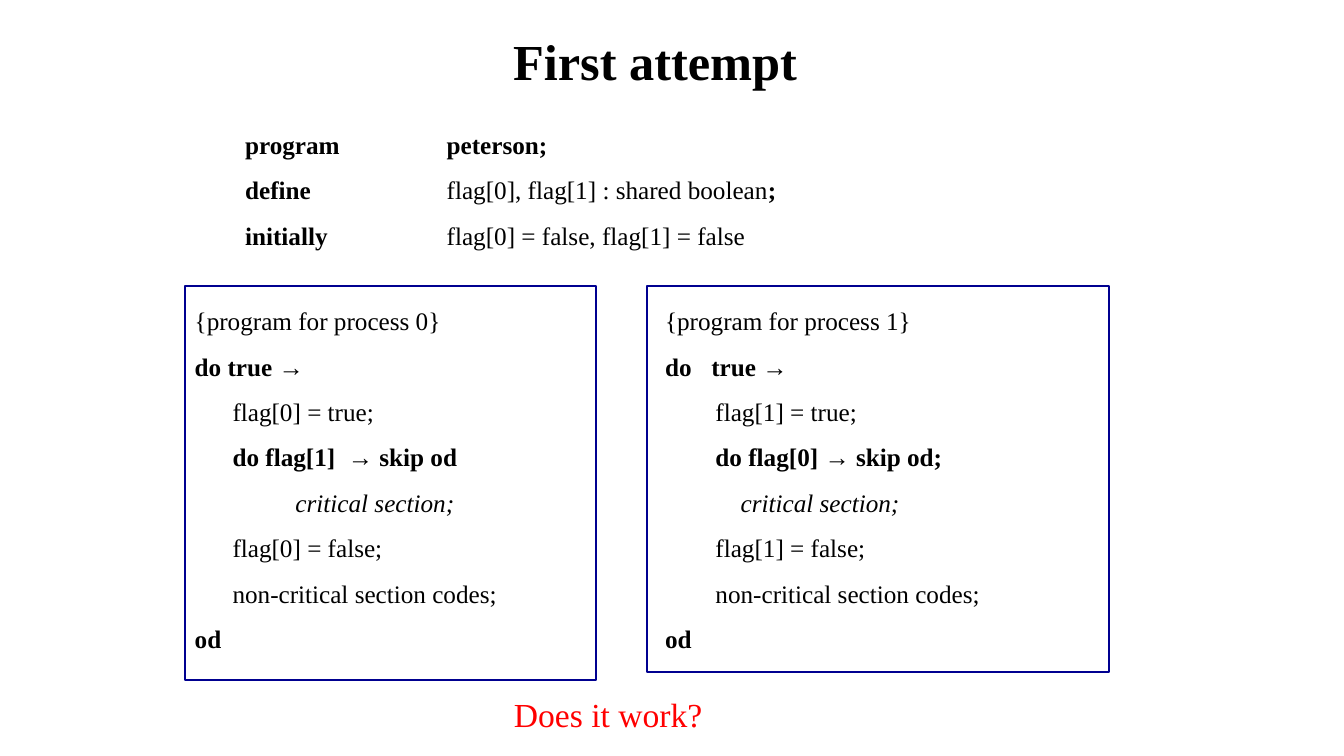
from pptx import Presentation
from pptx.dml.color import RGBColor
from pptx.enum.shapes import MSO_SHAPE
from pptx.enum.text import MSO_AUTO_SIZE, PP_ALIGN
from pptx.oxml.ns import qn
from pptx.util import Pt
from lxml.etree import SubElement

FONT = "Times New Roman"
BLACK, NAVY, RED = "000000", "000090", "FF0000"


def color(value):
    return RGBColor.from_string(value)


def add_text(box, lines, size=18, text_color=BLACK, wrap=True, spacing=1.5):
    """Add a text box; each line is (indent, tab stop, [(text, style), ...]), style using b and i."""
    text_frame = slide.shapes.add_textbox(*map(Pt, box)).text_frame
    text_frame.word_wrap = wrap
    text_frame.auto_size = MSO_AUTO_SIZE.SHAPE_TO_FIT_TEXT
    for number, (indent, tab_stop, pieces) in enumerate(lines):
        paragraph = text_frame.add_paragraph() if number else text_frame.paragraphs[0]
        paragraph.line_spacing = spacing
        properties = paragraph._p.get_or_add_pPr()
        if indent:
            properties.set("marL", str(Pt(indent)))
            properties.set("indent", "0")
        if tab_stop:
            tabs = SubElement(properties, qn("a:tabLst"))
            SubElement(tabs, qn("a:tab"), pos=str(Pt(tab_stop)), algn="l")
        for text, style in pieces:
            run = paragraph.add_run()
            run.text = text
            run.font.name = FONT
            run.font.size = Pt(size)
            run.font.bold = "b" in style
            run.font.italic = "i" in style
            run.font.color.rgb = color(text_color)
    return text_frame


presentation = Presentation()
presentation.slide_width, presentation.slide_height = Pt(960), Pt(540)
slide = presentation.slides.add_slide(presentation.slide_layouts[6])

# Programs of the two processes
processes = [
    # text box, frame, body indent, critical indent, loop start, loop tab, waiting line
    ((132, 204, 330, 291), (132, 204, 294, 282), 27, 72,
     "do true →", 0, "do flag[1]  → skip od"),
    ((468, 204, 321, 291), (462, 204, 330, 276), 36, 54,
     "do\ttrue →", 33, "do flag[0] → skip od;"),
]
for process, (box, frame, body, critical, loop, loop_tab, waiting) in enumerate(processes):
    add_text(box, [
        (0, 0, [(f"{{program for process {process}}}", "")]),
        (0, loop_tab, [(loop, "b")]),
        (body, 0, [(f"flag[{process}] = true;", "")]),
        (body, 0, [(waiting, "b")]),
        (critical, 0, [("critical section;", "i")]),
        (body, 0, [(f"flag[{process}] = false;", "")]),
        (body, 0, [("non-critical section codes;", "")]),
        (0, 0, [("od", "b")]),
    ])
    shape = slide.shapes.add_shape(MSO_SHAPE.RECTANGLE, *map(Pt, frame))
    shape.shadow.inherit = False
    shape.fill.background()
    shape.line.color.rgb = color(NAVY)
    shape.line.width = Pt(1.5)

# Declarations
add_text((168, 78, 606, 136), [
    (0, 144, [("program\tpeterson;", "b")]),
    (0, 144, [("define\t", "b"), ("flag[0], flag[1] : shared boolean", ""), (";", "b")]),
    (0, 144, [("initially\t", "b"), ("flag[0] = false, flag[1] = false", "")]),
])

# Title and closing question
title = add_text((358, 18, 220, 51), [(0, 0, [("First attempt", "b")])],
                 size=36, wrap=False, spacing=None)
title.paragraphs[0].alignment = PP_ALIGN.CENTER
add_text((360, 492, 150, 37), [(0, 0, [("Does it work?", "")])],
         size=24, text_color=RED, wrap=False, spacing=None)

presentation.save("out.pptx")
